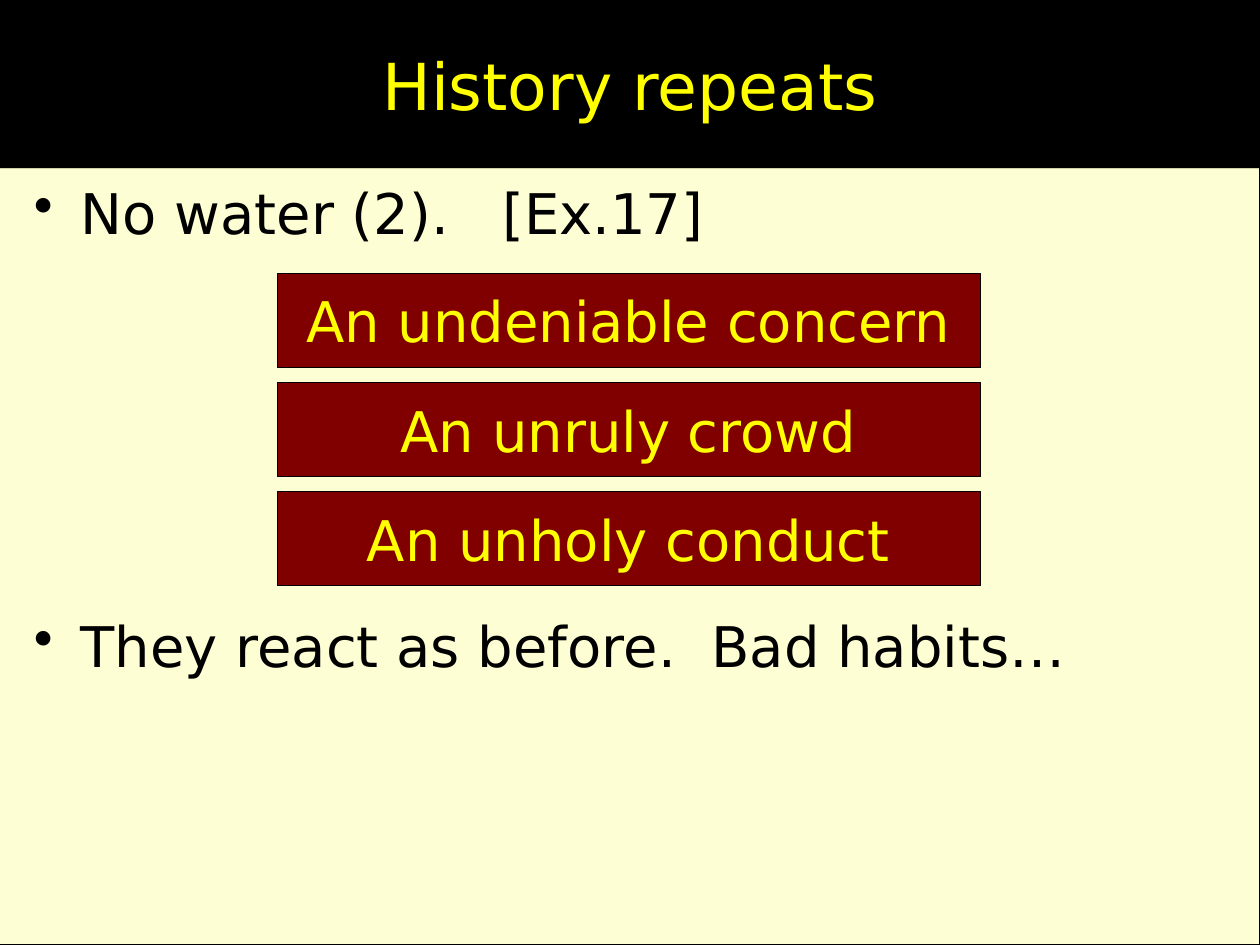
from dataclasses import dataclass

from lxml.etree import SubElement
from pptx import Presentation
from pptx.dml.color import RGBColor
from pptx.enum.shapes import MSO_SHAPE as Kind
from pptx.enum.text import MSO_ANCHOR as Anchor, PP_ALIGN as Align
from pptx.oxml.ns import qn
from pptx.shapes.autoshape import Shape
from pptx.slide import Slide
from pptx.text.text import _Paragraph as Para
from pptx.util import Pt

FONT = "DejaVu Sans"
HUES = {
    "page": "FDFDFD",
    "black": "000000",
    "yellow": "FFFF00",
    "cream": "FFFFCC",
    "maroon": "800000",
}


@dataclass
class Box:
    left: float
    top: float
    width: float
    height: float


@dataclass
class Point:
    text: str
    before: float = 0


PANEL = Box(-1.4, 95.8, 721.4, 444.2)
CARD = Box(158.4, 156.2, 401.8, 54)
STEP = 62.3
CARDS = ["An undeniable concern", "An unruly crowd", "An unholy conduct"]
POINTS = [
    Point("No water (2).   [Ex.17]"),
    Point("They react as before.  Bad habits…", 202.5),
]


def hue(name: str) -> RGBColor:
    return RGBColor.from_string(HUES[name])


def add_run(para: Para, text: str, size: float, color: str) -> None:
    run = para.add_run()
    run.text = text
    run.font.name = FONT
    run.font.size = Pt(size)
    run.font.color.rgb = hue(color)


def add_rect(slide: Slide, box: Box, fill: str) -> Shape:
    shape = slide.shapes.add_shape(
        Kind.RECTANGLE, Pt(box.left), Pt(box.top), Pt(box.width), Pt(box.height)
    )
    shape.shadow.inherit = False
    shape.fill.solid()
    shape.fill.fore_color.rgb = hue(fill)
    shape.line.color.rgb = hue("black")
    shape.line.width = Pt(0.75)
    shape.text_frame.word_wrap = True
    return shape


def set_title(slide: Slide, text: str) -> None:
    title = slide.shapes.title
    title.left, title.top, title.width, title.height = 0, 0, Pt(720), Pt(96.5)
    title.fill.solid()
    title.fill.fore_color.rgb = hue("black")
    frame = title.text_frame
    frame.vertical_anchor = Anchor.MIDDLE
    frame.paragraphs[0].alignment = Align.CENTER
    add_run(frame.paragraphs[0], text, 37, "yellow")


def set_bullet(para: Para) -> None:
    props = para._p.get_or_add_pPr()
    props.set("marL", str(Pt(40.3)))
    props.set("indent", str(Pt(-26.6)))
    SubElement(props, qn("a:buChar")).set("char", "•")


def add_panel(slide: Slide) -> None:
    panel = add_rect(slide, PANEL, "cream")
    color = panel.fill._xPr.find(qn("a:solidFill"))[0]
    SubElement(color, qn("a:alpha")).set("val", "82000")
    frame = panel.text_frame
    frame.vertical_anchor = Anchor.TOP
    frame.margin_top = Pt(6.5)
    for i, point in enumerate(POINTS):
        para = frame.add_paragraph() if i else frame.paragraphs[0]
        set_bullet(para)
        para.alignment = Align.LEFT
        para.space_before = Pt(point.before)
        para.space_after = Pt(6)
        add_run(para, point.text, 32, "black")


def add_card(slide: Slide, text: str, row: int) -> None:
    box = Box(CARD.left, CARD.top + row * STEP, CARD.width, CARD.height)
    frame = add_rect(slide, box, "maroon").text_frame
    frame.vertical_anchor = Anchor.MIDDLE
    frame.paragraphs[0].alignment = Align.CENTER
    add_run(frame.paragraphs[0], text, 32, "yellow")


def main() -> None:
    deck = Presentation()
    deck.slide_width, deck.slide_height = Pt(720), Pt(540)
    slide = deck.slides.add_slide(deck.slide_layouts[5])
    slide.background.fill.solid()
    slide.background.fill.fore_color.rgb = hue("page")
    set_title(slide, "History repeats")
    add_panel(slide)
    for row, text in enumerate(CARDS):
        add_card(slide, text, row)
    deck.save("out.pptx")


if __name__ == "__main__":
    main()
